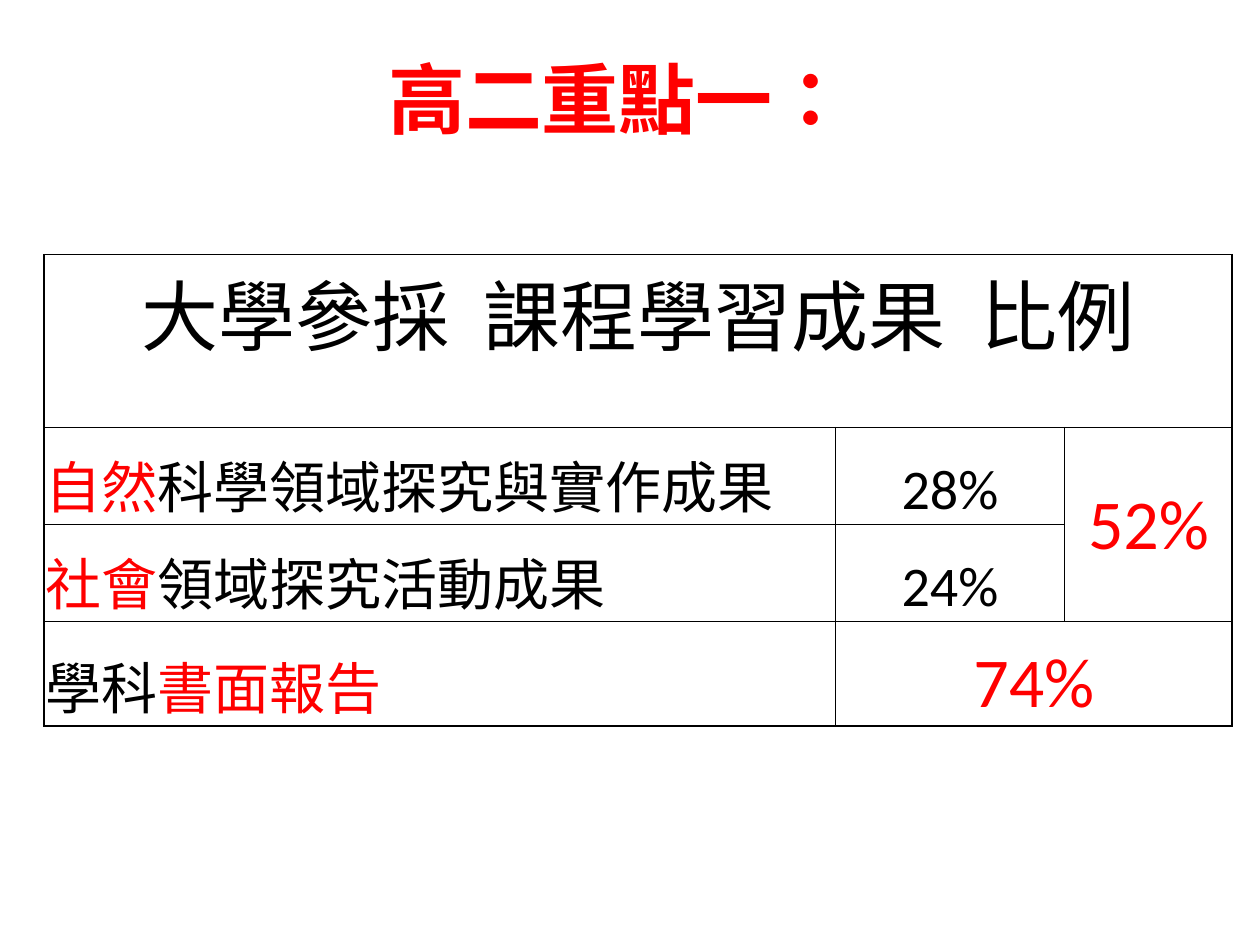
"""Build a slide with a red title and a bordered table of adoption rates."""
from lxml import etree
from pptx import Presentation, util as u
from pptx.dml.color import RGBColor
from pptx.enum import text as t
from pptx.oxml import ns

RED = RGBColor(255, 0, 0)
BLACK = RGBColor(0, 0, 0)
HAN = "Noto Sans CJK SC"
LATIN = "Calibri"
LEFT, MID = t.PP_ALIGN.LEFT, t.PP_ALIGN.CENTER
BASE = t.MSO_ANCHOR.BOTTOM
COLS = [6.28, 1.82, 1.33]
ROWS = [1.22, 0.77, 0.77, 0.83]
SPANS = [((0, 0), (0, 2)), ((1, 2), (2, 2)), ((3, 1), (3, 2))]
CELLS = {
    (0, 0): ([("大學參採  課程學習成果  比例", BLACK)], 44, MID, BASE),
    (1, 0): ([("自然", RED), ("科學領域探究與實作成果", BLACK)], 32, LEFT, BASE),
    (1, 1): ([("28%", BLACK)], 32, MID, BASE),
    (1, 2): ([("52%", RED)], 40, MID, t.MSO_ANCHOR.MIDDLE),
    (2, 0): ([("社會", RED), ("領域探究活動成果", BLACK)], 32, LEFT, BASE),
    (2, 1): ([("24%", BLACK)], 32, MID, BASE),
    (3, 0): ([("學科", BLACK), ("書面報告", RED)], 32, LEFT, BASE),
    (3, 1): ([("74%", RED)], 40, MID, BASE),
}


def apply(item, vals):
    """Set each named attribute of an item."""
    for key, val in vals.items():
        setattr(item, key, val)


def write(par, runs, size, align, face=LATIN, bold=False):
    """Fill a paragraph with coloured runs."""
    par.alignment = align
    for words, color in runs:
        run = par.add_run()
        run.text = words
        apply(run.font, {"size": u.Pt(size), "name": face, "bold": bold})
        run.font.color.rgb = color
        props = run.font._element
        props.set("lang", "zh-TW")
        etree.SubElement(props, ns.qn("a:ea"), typeface=HAN)


def edge(cell):
    """Draw a thin black line on all four sides of a cell."""
    props = cell._tc.get_or_add_tcPr()
    for side in ("lnL", "lnR", "lnT", "lnB"):
        line = etree.SubElement(props, ns.qn(f"a:{side}"), w=str(u.Pt(1)))
        fill = etree.SubElement(line, ns.qn("a:solidFill"))
        etree.SubElement(fill, ns.qn("a:srgbClr"), val=str(BLACK))


def add_title(slide):
    """Add the centred title."""
    box = slide.shapes.add_textbox(
        u.Inches(0.5), u.Inches(0.36), u.Inches(8.83), u.Inches(3.54))
    box.text_frame.word_wrap = True
    par = box.text_frame.paragraphs[0]
    write(par, [("高二重點一：", RED)], 44, MID, HAN, True)


def add_rates(slide):
    """Add the table of rates with its merged cells."""
    frame = slide.shapes.add_table(
        len(ROWS), len(COLS), u.Inches(0.35), u.Inches(2.02),
        u.Inches(sum(COLS)), u.Inches(sum(ROWS)))
    table = frame.table
    apply(table, {"first_row": False, "horz_banding": False})
    for col, width in zip(table.columns, COLS):
        col.width = u.Inches(width)
    for row, height in zip(table.rows, ROWS):
        row.height = u.Inches(height)
    for cell in table.iter_cells():
        edge(cell)
        cell.fill.background()
        thin = u.Inches(0.01)
        apply(cell, {"margin_left": thin, "margin_right": thin,
                     "margin_top": thin, "margin_bottom": 0})
    for start, end in SPANS:
        table.cell(*start).merge(table.cell(*end))
    for spot, (runs, size, align, anchor) in CELLS.items():
        cell = table.cell(*spot)
        cell.vertical_anchor = anchor
        face = LATIN if spot[0] else HAN
        write(cell.text_frame.paragraphs[0], runs, size, align, face)
    table.cell(0, 0).margin_bottom = u.Inches(0.63)


def main():
    """Build and save the slide."""
    deck = Presentation()
    apply(deck, {"slide_width": u.Inches(10), "slide_height": u.Inches(7.5)})
    slide = deck.slides.add_slide(deck.slide_layouts[6])
    add_title(slide)
    add_rates(slide)
    deck.save("out.pptx")


if __name__ == "__main__":
    main()
